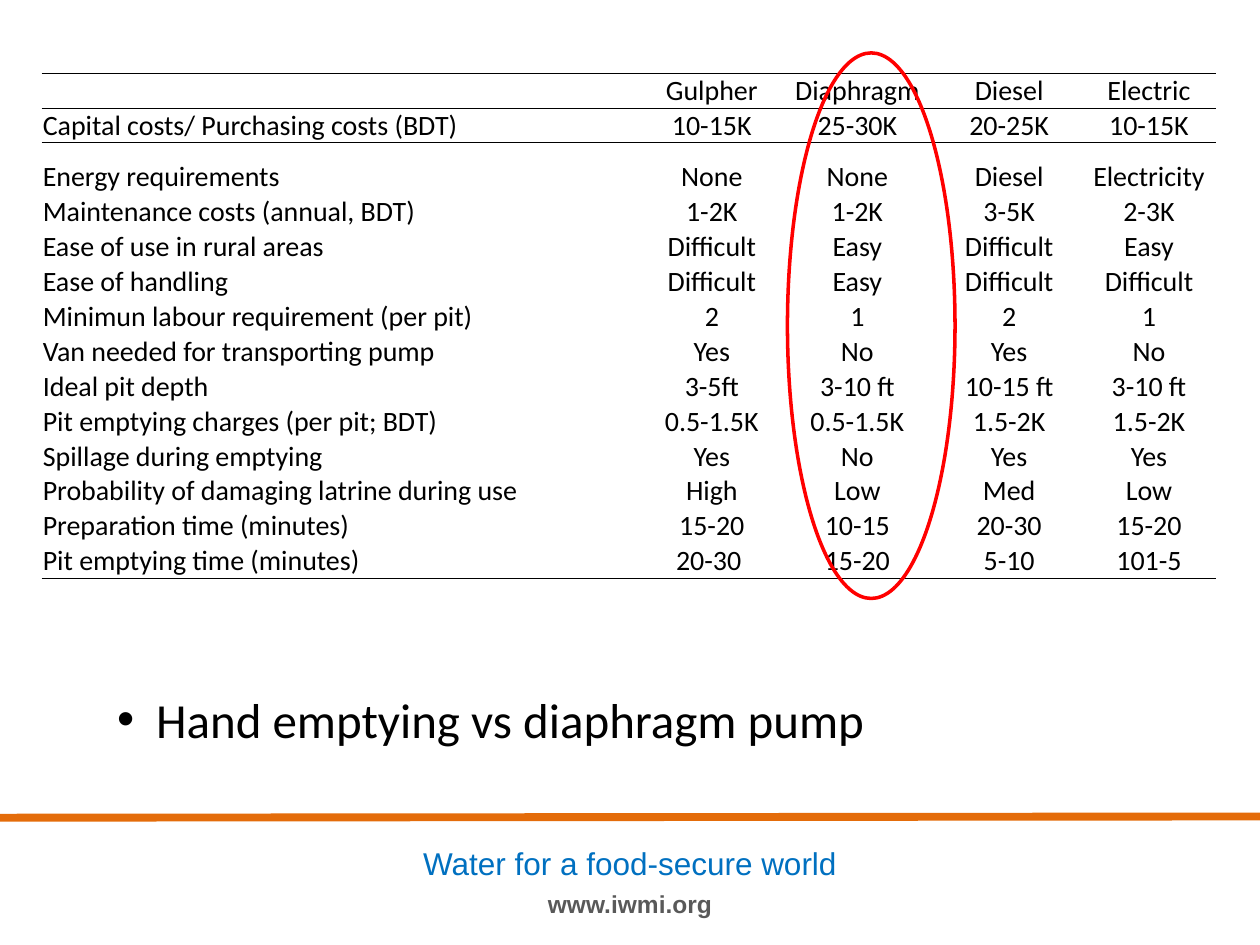
from dataclasses import dataclass

from lxml.etree import SubElement
from pptx import Presentation
from pptx.dml.color import RGBColor
from pptx.enum.shapes import MSO_CONNECTOR, MSO_SHAPE
from pptx.enum.text import MSO_ANCHOR, PP_ALIGN
from pptx.oxml.ns import qn
from pptx.util import Inches, Pt

WIDTH, HEIGHT = Inches(10), Inches(7.5)
COLORS = {"ink": "000000", "ring": "FF0000", "rule": "E46C0A",
          "motto": "0070C0", "address": "595959"}
NO_STYLE = "{2D5ABB26-0587-4C30-8999-92F81FD0307C}"
COLUMNS = [1.06, 1.06, 1.06, 1.61, 1.06, 1.25, 1.16, 1.06]
LABEL_COLUMNS = 4
TABLE_HEIGHT, TALL_ROW, TALL_HEIGHT = 4.01, 2, 0.41
CELL_FORMAT = {"vertical_anchor": MSO_ANCHOR.BOTTOM, "margin_left": Pt(0.75),
               "margin_right": Pt(0.75), "margin_top": Pt(0.5), "margin_bottom": 0}


@dataclass
class Criterion:
    label: str
    span: int
    values: list[str]


@dataclass
class FooterLine:
    text: str
    top: float
    height: float
    color: str
    size: int
    bold: bool = False


CRITERIA = [
    Criterion("", 1, ["Gulpher", "Diaphragm", "Diesel", "Electric"]),
    Criterion("Capital costs/ Purchasing costs (BDT)", 4, ["10-15K", "25-30K", "20-25K", "10-15K"]),
    Criterion("Energy requirements", 3, ["None", "None", "Diesel", "Electricity"]),
    Criterion("Maintenance costs (annual, BDT)", 4, ["1-2K", "1-2K", "3-5K", "2-3K"]),
    Criterion("Ease of use in rural areas", 3, ["Difficult", "Easy", "Difficult", "Easy"]),
    Criterion("Ease of handling", 2, ["Difficult", "Easy", "Difficult", "Difficult"]),
    Criterion("Minimun labour requirement (per pit)", 4, ["2", "1", "2", "1"]),
    Criterion("Van needed for transporting pump", 4, ["Yes", "No", "Yes", "No"]),
    Criterion("Ideal pit depth", 2, ["3-5ft", "3-10 ft", "10-15 ft", "3-10 ft"]),
    Criterion("Pit emptying charges (per pit; BDT)", 4, ["0.5-1.5K", "0.5-1.5K", "1.5-2K", "1.5-2K"]),
    Criterion("Spillage during emptying", 3, ["Yes", "No", "Yes", "Yes"]),
    Criterion("Probability of damaging latrine during use", 4, ["High", "Low", "Med", "Low"]),
    Criterion("Preparation time (minutes)", 3, ["15-20", "10-15", "20-30", "15-20"]),
    Criterion("Pit emptying time (minutes)", 3, ["20-30 ", "15-20", "5-10", "101-5"]),
]
FOOTER = [
    FooterLine("www.iwmi.org", 7.01, 0.34, "address", 14, True),
    FooterLine("Water for a food-secure world", 6.65, 0.4, "motto", 18),
]


def color(key: str) -> RGBColor:
    """Look up a named colour."""
    return RGBColor.from_string(COLORS[key])


def write(para, text: str, tint: str, **font) -> None:
    """Add one formatted span of text to a paragraph."""
    span = para.add_run()
    span.text = text
    span.font.color.rgb = color(tint)
    for key, value in font.items():
        setattr(span.font, key, value)


def add_border(cell, side: str) -> None:
    """Draw a thin black border on one side of a cell."""
    line = SubElement(cell._tc.get_or_add_tcPr(), qn(f"a:{side}"), w=str(Pt(0.5)))
    fill = SubElement(line, qn("a:solidFill"))
    SubElement(fill, qn("a:srgbClr"), val=COLORS["ink"])


def fill_cell(cell, text: str, align: PP_ALIGN, sides: list[str]) -> None:
    """Format a cell, its borders and its text."""
    for key, value in CELL_FORMAT.items():
        setattr(cell, key, value)
    for side in sides:
        add_border(cell, side)
    cell.fill.background()
    para = cell.text_frame.paragraphs[0]
    para.alignment = align
    if text:
        write(para, text, "ink", size=Pt(16), name="Calibri")
    else:
        SubElement(para._p, qn("a:endParaRPr"), sz="1600")


def add_pump_table(page) -> None:
    """Add the comparison of pumps."""
    count = len(CRITERIA)
    row_height = (TABLE_HEIGHT - TALL_HEIGHT) / (count - 1)
    table = page.shapes.add_table(
        count, len(COLUMNS), Inches(0.33), Inches(0.58),
        Inches(sum(COLUMNS)), Inches(TABLE_HEIGHT)).table
    table.first_row = table.horz_banding = False
    table._tbl.tblPr.find(qn("a:tableStyleId")).text = NO_STYLE
    for column, width in zip(table.columns, COLUMNS):
        column.width = Inches(width)
    for index, item in enumerate(CRITERIA):
        table.rows[index].height = Inches(TALL_HEIGHT if index == TALL_ROW else row_height)
        sides = ["lnT"] if index < 2 else []
        if index in (0, count - 1):
            sides.append("lnB")
        texts = [item.label] + [""] * (LABEL_COLUMNS - 1) + item.values
        for place, text in enumerate(texts):
            align = PP_ALIGN.LEFT if place < LABEL_COLUMNS else PP_ALIGN.CENTER
            fill_cell(table.cell(index, place), text, align, sides)
        if item.span > 1:
            table.cell(index, 0).merge(table.cell(index, item.span - 1))


def add_footer(page) -> None:
    """Add the orange rule and the lines below it."""
    rule = page.shapes.add_connector(
        MSO_CONNECTOR.STRAIGHT, 0, Inches(6.49), WIDTH, Inches(6.48))
    rule.line.color.rgb = color("rule")
    rule.line.width = Pt(4.5)
    SubElement(rule._element.spPr, qn("a:effectLst"))
    for item in FOOTER:
        box = page.shapes.add_textbox(0, Inches(item.top), WIDTH, Inches(item.height))
        box.text_frame.word_wrap = True
        para = box.text_frame.paragraphs[0]
        para.alignment = PP_ALIGN.CENTER
        write(para, item.text, item.color, size=Pt(item.size), name="Arial", bold=item.bold)


def add_ring(page) -> None:
    """Circle the diaphragm pump column."""
    ring = page.shapes.add_shape(
        MSO_SHAPE.OVAL, Inches(6.25), Inches(0.42), Inches(1.33), Inches(4.33))
    ring.shadow.inherit = False
    ring.fill.background()
    ring.line.color.rgb = color("ring")
    ring.line.width = Pt(2)


def fill_body(page) -> None:
    """Place the bullet in the body placeholder."""
    body = page.placeholders[1]
    frame = {"left": 0.83, "top": 5.42, "width": 8.42, "height": 0.57}
    for key, value in frame.items():
        setattr(body, key, Inches(value))
    para = body.text_frame.paragraphs[0]
    layout = para._p.get_or_add_pPr()
    layout.set("marL", str(Inches(0.31)))
    layout.set("indent", str(-Inches(0.31)))
    SubElement(layout, qn("a:buFont"), typeface="Arial")
    SubElement(layout, qn("a:buChar"), char="•")
    para.space_before = Pt(0)
    write(para, "Hand emptying vs diaphragm pump", "ink", size=Pt(28), name="Calibri")


def main() -> None:
    """Build the slide and save the deck."""
    deck = Presentation()
    deck.slide_width, deck.slide_height = WIDTH, HEIGHT
    page = deck.slides.add_slide(deck.slide_layouts[1])
    title = page.shapes.title._element
    title.getparent().remove(title)
    add_footer(page)
    add_pump_table(page)
    add_ring(page)
    fill_body(page)
    deck.save("out.pptx")


if __name__ == "__main__":
    main()
